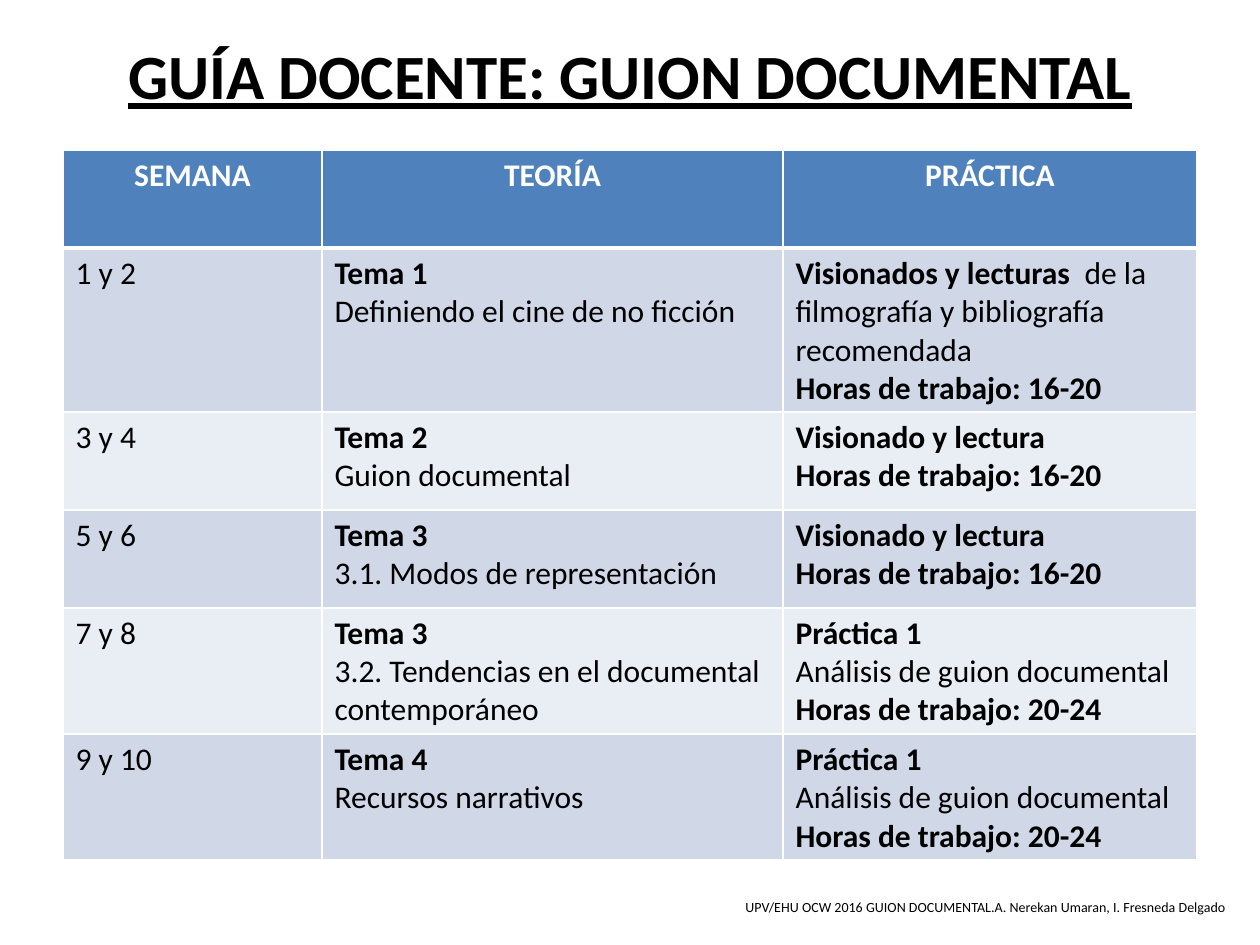
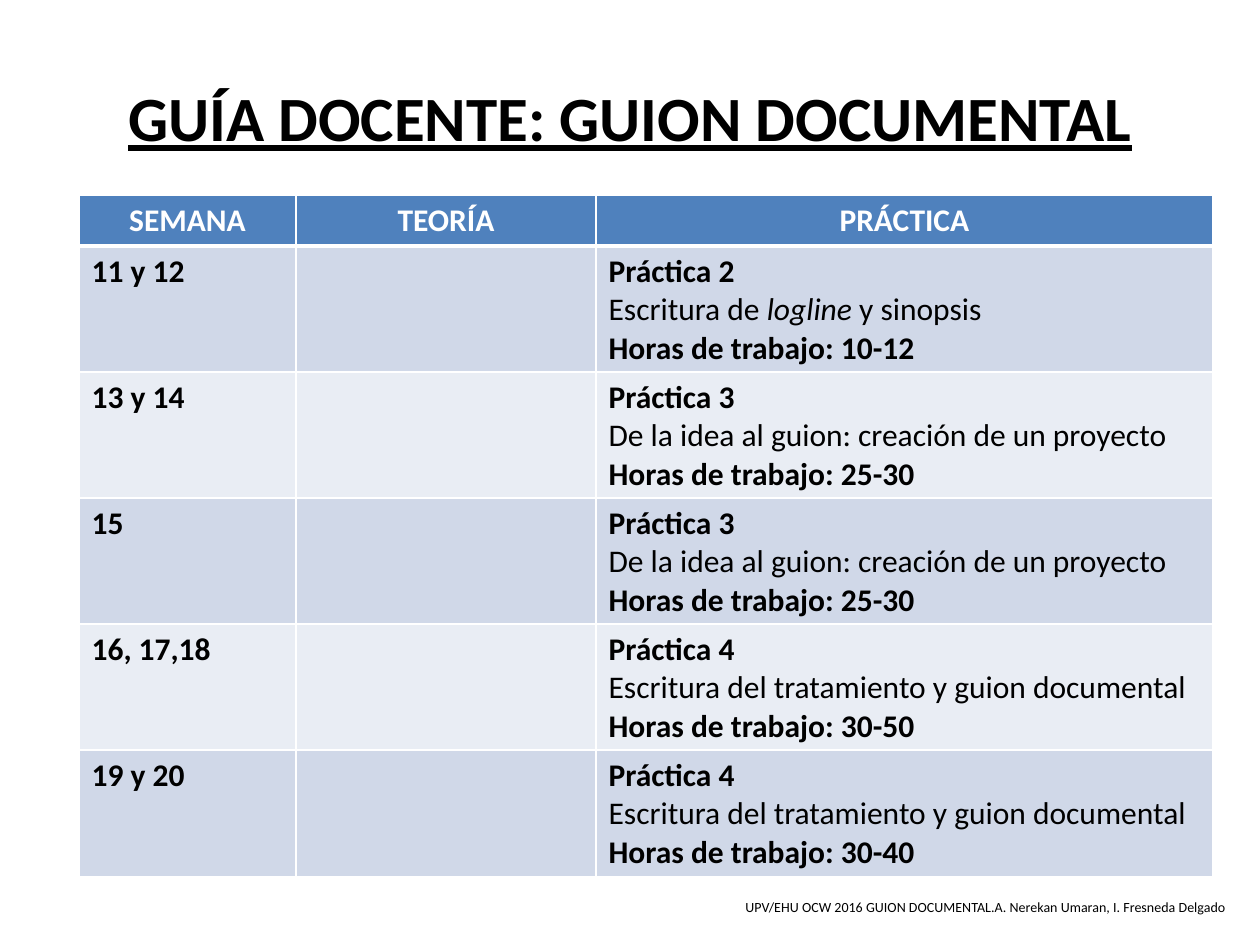
from dataclasses import dataclass

from lxml.etree import SubElement
from pptx import Presentation
from pptx.dml.color import RGBColor
from pptx.enum.text import MSO_ANCHOR as Anchor, MSO_AUTO_SIZE as AutoSize, PP_ALIGN as Align
from pptx.oxml.ns import qn
from pptx.util import Emu, Pt

EMU_PER_PX = 914400 / 126
TITLE_ONLY = 5


@dataclass(frozen=True)
class Theme:
    font: str = "Calibri"
    ink: str = "000000"
    white: str = "FFFFFF"
    header: str = "4F81BD"
    bands: tuple = ("D0D8E8", "E9EDF4")
    title_size: int = 36
    table_size: int = 18
    footer_size: int = 8
    thin_rule: int = 1
    thick_rule: int = 3


@dataclass(frozen=True)
class Span:
    text: str
    bold: bool = False
    italic: bool = False


THEME = Theme()
TITLE = "GUÍA DOCENTE: GUION DOCUMENTAL"
FOOTER = "UPV/EHU OCW 2016 GUION DOCUMENTAL.A. Nerekan Umaran, I. Fresneda Delgado "
HEADINGS = ("SEMANA", "TEORÍA", "PRÁCTICA")


def px(length):
    return Emu(round(length * EMU_PER_PX))


def place(shape, left, top, width, height):
    shape.left, shape.top, shape.width, shape.height = map(px, (left, top, width, height))


def bold(text):
    return [Span(text, bold=True)]


def plain(text):
    return [Span(text)]


def add_spans(paragraph, spans, size, color=THEME.ink, underline=None):
    for span in spans:
        run = paragraph.add_run()
        run.text = span.text
        font = run.font
        font.name, font.size = THEME.font, Pt(size)
        font.bold, font.italic, font.underline = span.bold, span.italic, underline
        font.color.rgb = RGBColor.from_string(color)


def add_title(slide, space_below):
    """Fill the title placeholder; space_below lifts the line inside its box."""
    title = slide.shapes.title
    place(title, 63, 38, 1134, 157)
    frame = title.text_frame
    frame.auto_size, frame.word_wrap = AutoSize.NONE, True
    frame.vertical_anchor = Anchor.MIDDLE
    frame.margin_top, frame.margin_bottom = 0, px(space_below)
    paragraph = frame.paragraphs[0]
    paragraph.alignment = Align.CENTER
    add_spans(paragraph, bold(TITLE), THEME.title_size, underline=True)


def add_footer(slide):
    credit = slide.shapes.add_textbox(px(654), px(892), px(588), px(68))
    credit.text_frame.word_wrap = True
    paragraph = credit.text_frame.paragraphs[0]
    paragraph.alignment = Align.RIGHT
    add_spans(paragraph, plain(FOOTER), THEME.footer_size)


def set_borders(cell, top, bottom):
    properties = cell._tc.get_or_add_tcPr()
    widths = {"lnL": THEME.thin_rule, "lnR": THEME.thin_rule, "lnT": top, "lnB": bottom}
    for side, width in widths.items():
        rule = SubElement(properties, qn(f"a:{side}"), w=str(Pt(width)))
        fill = SubElement(rule, qn("a:solidFill"))
        SubElement(fill, qn("a:srgbClr"), val=THEME.white)


def fill_cell(cell, paragraphs, row):
    header = row == 0
    set_borders(cell,
                top=THEME.thick_rule if row == 1 else THEME.thin_rule,
                bottom=THEME.thick_rule if header else THEME.thin_rule)
    cell.fill.solid()
    background = THEME.header if header else THEME.bands[(row - 1) % 2]
    cell.fill.fore_color.rgb = RGBColor.from_string(background)
    frame = cell.text_frame
    for index, spans in enumerate(paragraphs):
        paragraph = frame.add_paragraph() if index else frame.paragraphs[0]
        paragraph.alignment = Align.CENTER if header else Align.LEFT
        add_spans(paragraph, spans, THEME.table_size, THEME.white if header else THEME.ink)


def add_schedule(slide, box, column_widths, row_height, weeks):
    rows = [[[bold(heading)] for heading in HEADINGS], *weeks]
    holder = slide.shapes.add_table(len(rows), len(HEADINGS), *map(px, box))
    schedule = holder.table
    for column, width in zip(schedule.columns, column_widths):
        column.width = px(width)
    for index, (table_row, contents) in enumerate(zip(schedule.rows, rows)):
        table_row.height = px(row_height)
        for cell, paragraphs in zip(table_row.cells, contents):
            fill_cell(cell, paragraphs, index)
    place(holder, *box)


def hours(span):
    return bold(f"Horas de trabajo: {span}")


def topic(number, subject):
    return [bold(f"Tema {number}"), plain(subject)]


def practice(number, task, span):
    return [bold(f"Práctica {number}"), task, hours(span)]


def theory_weeks():
    viewing = [bold("Visionado y lectura"), hours("16-20")]
    first_viewing = [
        bold("Visionados y lecturas  ") + plain("de la filmografía y bibliografía recomendada"),
        hours("16-20"),
    ]
    analysis = practice(1, plain("Análisis de guion documental"), "20-24")
    plan = [
        ("1 y 2", topic(1, "Definiendo el cine de no ficción"), first_viewing),
        ("3 y 4", topic(2, "Guion documental"), viewing),
        ("5 y 6", topic(3, "3.1. Modos de representación"), viewing),
        ("7 y 8", topic(3, "3.2. Tendencias en el documental contemporáneo"), analysis),
        ("9 y 10", topic(4, "Recursos narrativos"), analysis),
    ]
    return [[[plain(week)], theory, work] for week, theory, work in plan]


def practice_weeks():
    synopsis = [Span("Escritura de "), Span("logline ", italic=True), Span("y sinopsis")]
    project = plain("De la idea al guion: creación de un proyecto")
    treatment = plain("Escritura del tratamiento y guion documental")
    plan = [
        ("11 y 12", 2, synopsis, "10-12"),
        ("13 y 14", 3, project, "25-30"),
        ("15", 3, project, "25-30"),
        ("16, 17,18", 4, treatment, "30-50"),
        ("19 y 20", 4, treatment, "30-40"),
    ]
    return [[[bold(week)], [], practice(*work)] for week, *work in plan]


def add_guide_slide(deck, title_space, **schedule):
    slide = deck.slides.add_slide(deck.slide_layouts[TITLE_ONLY])
    add_footer(slide)
    add_title(slide, title_space)
    add_schedule(slide, **schedule)


def main():
    deck = Presentation()
    deck.slide_width, deck.slide_height = px(1260), px(945)
    add_guide_slide(deck, title_space=84, box=(63, 150, 1134, 712),
                    column_widths=(259, 461, 414), row_height=98, weeks=theory_weeks())
    add_guide_slide(deck, title_space=0, box=(79, 195, 1134, 682),
                    column_widths=(217, 300, 617), row_height=51, weeks=practice_weeks())
    deck.save("out.pptx")


if __name__ == "__main__":
    main()
